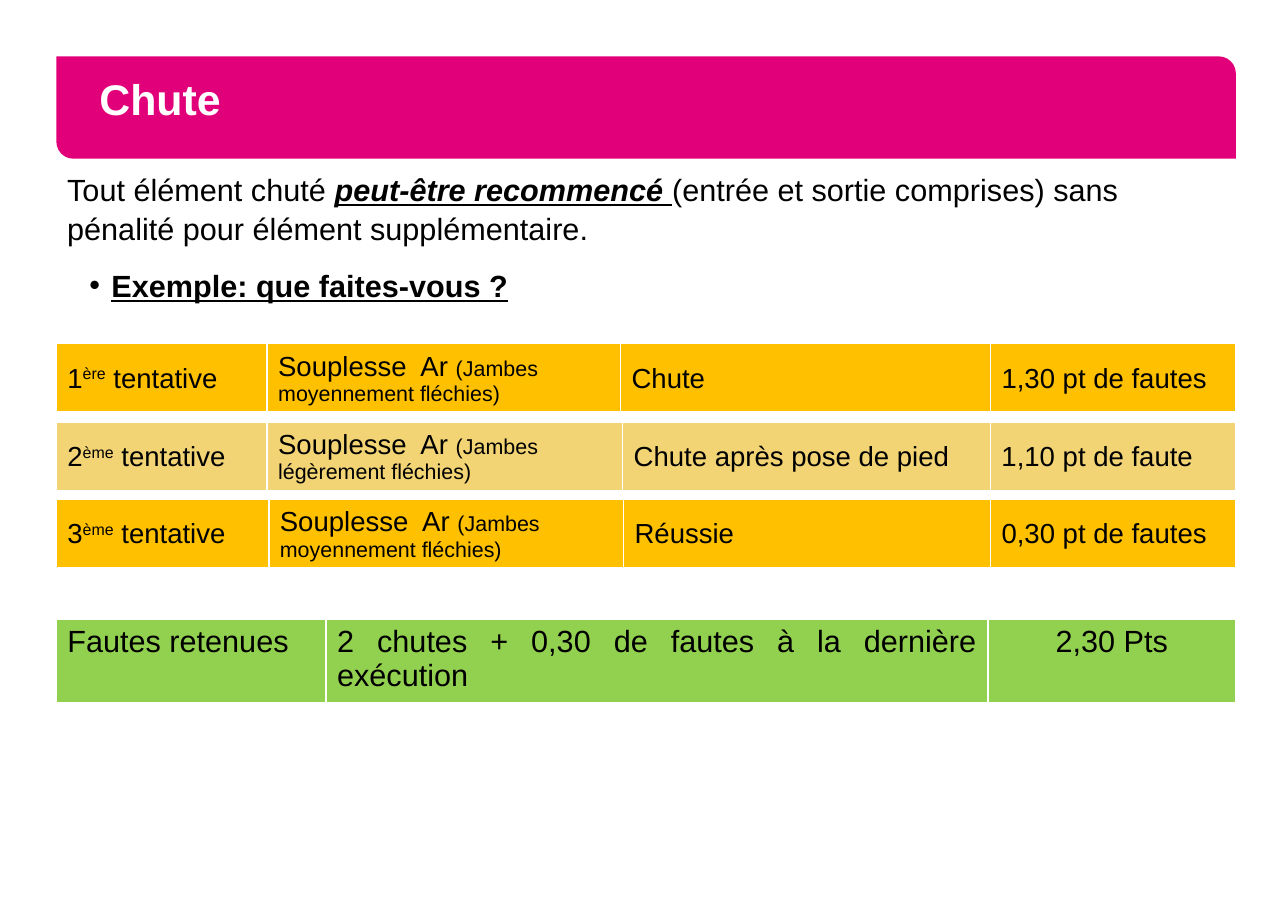
from lxml import etree
from pptx import Presentation
from pptx.dml.color import RGBColor as RGB
from pptx.enum.shapes import MSO_SHAPE as SHAPE
from pptx.enum.text import MSO_ANCHOR as ANCHOR, PP_ALIGN as ALIGN
from pptx.oxml.ns import qn
from pptx.util import Cm, Pt

COLORS = {
    "pink": "E2007A", "white": "FFFFFF", "black": "000000",
    "orange": "FFC000", "sand": "F2D474", "green": "92D050",
}
LEFT, WIDTH = Cm(1.3), Cm(27.2)


def add_runs(p, runs, size, color="black"):
    """Add (text, options) runs in Arial; options override size and style."""
    for text, opts in runs:
        r = p.add_run()
        r.text = text
        r.font.name = "Arial"
        r.font.size = Pt(opts.get("size", size))
        r.font.color.rgb = RGB.from_string(COLORS[color])
        r.font.bold = opts.get("bold", False)
        r.font.italic = opts.get("italic", False)
        r.font.underline = opts.get("underline", False)
        if "super" in opts:
            r.font._element.set("baseline", "30000")


def add_border(cell, side, width):
    ln = etree.SubElement(cell._tc.get_or_add_tcPr(), qn(f"a:{side}"), w=str(Pt(width)))
    fill = etree.SubElement(ln, qn("a:solidFill"))
    etree.SubElement(fill, qn("a:srgbClr"), val=COLORS["white"])


prs = Presentation()
prs.slide_width, prs.slide_height = Cm(29.7), Cm(21)
s = prs.slides.add_slide(prs.slide_layouts[6])

# Title banner
banner = s.shapes.add_shape(SHAPE.ROUND_2_DIAG_RECTANGLE, LEFT, Cm(1.3), WIDTH, Cm(2.36))
banner.adjustments[0], banner.adjustments[1] = 0, 0.167
banner.shadow.inherit = False
banner.fill.solid()
banner.fill.fore_color.rgb = RGB.from_string(COLORS["pink"])
banner.line.fill.background()
tf = banner.text_frame
tf.margin_left = tf.margin_right = Cm(0.88)
tf.vertical_anchor = ANCHOR.MIDDLE
p = tf.paragraphs[0]
p.alignment = ALIGN.LEFT
p.line_spacing = Pt(22)
add_runs(p, [("Chute", {"bold": True})], 28, "white")

# Rule and example heading
tf = s.shapes.add_textbox(LEFT, Cm(3.78), WIDTH, Cm(13.59)).text_frame
tf.word_wrap = True
rule = tf.paragraphs[0]
add_runs(rule, [
    ("Tout élément chuté ", {}),
    ("peut-être recommencé ", {"bold": True, "italic": True, "underline": True}),
    ("(entrée et sortie comprises) sans pénalité pour élément supplémentaire.", {}),
], 20)
example = tf.add_paragraph()
pPr = example._p.get_or_add_pPr()
pPr.set("marL", str(Cm(1.02)))
pPr.set("indent", str(-Cm(0.51)))
etree.SubElement(pPr, qn("a:buFont"), typeface="Arial")
etree.SubElement(pPr, qn("a:buChar"), char="•")
add_runs(example, [("Exemple: que faites-vous ?", {"bold": True, "underline": True})], 20)
example.space_before = Pt(6)
for p in (rule, example):
    p.space_after = Pt(6)
    p.line_spacing = 1.05

# Attempts: top, height, column widths, fill, number, ordinal, legs, result, faults
attempts = [
    (7.92, 1.5, (4.86, 8.15, 8.53, 5.66), "orange", "1", "ère",
     "moyennement", "Chute", "1,30 pt de fautes"),
    (9.73, 1.42, (4.86, 8.2, 8.48, 5.66), "sand", "2", "ème",
     "légèrement", "Chute après pose de pied", "1,10 pt de faute"),
    (11.51, 1.6, (4.9, 8.18, 8.46, 5.66), "orange", "3", "ème",
     "moyennement", "Réussie", "0,30 pt de fautes"),
]
tables = []
for top, height, widths, fill, number, ordinal, legs, result, faults in attempts:
    cells = [
        ([(number, {}), (ordinal, {"super": True}), (" tentative", {})], ALIGN.LEFT),
        ([("Souplesse  Ar ", {}), (f"(Jambes {legs} fléchies)", {"size": 14})], ALIGN.LEFT),
        ([(result, {})], ALIGN.LEFT),
        ([(faults, {})], ALIGN.JUSTIFY),
    ]
    tables.append((top, height, widths, fill, 18, ANCHOR.MIDDLE, cells))

# Faults kept
tables.append((14.27, 1.68, (6.22, 15.26, 5.72), "green", 20, ANCHOR.TOP, [
    ([("Fautes retenues", {})], ALIGN.LEFT),
    ([("2 chutes + 0,30 de fautes à la dernière exécution", {})], ALIGN.JUSTIFY),
    ([("2,30 Pts", {})], ALIGN.CENTER),
]))

# One single-row table each
for top, height, widths, fill, size, anchor, cells in tables:
    table = s.shapes.add_table(1, len(cells), LEFT, Cm(top), WIDTH, Cm(height)).table
    table.first_row = table.horz_banding = False
    for i, (runs, align) in enumerate(cells):
        table.columns[i].width = Cm(widths[i])
        cell = table.cell(0, i)
        for side, width in (("lnL", 1), ("lnR", 1), ("lnT", 1), ("lnB", 3)):
            add_border(cell, side, width)
        cell.fill.solid()
        cell.fill.fore_color.rgb = RGB.from_string(COLORS[fill])
        cell.vertical_anchor = anchor
        p = cell.text_frame.paragraphs[0]
        p.alignment = align
        add_runs(p, runs, size)

prs.save("out.pptx")
